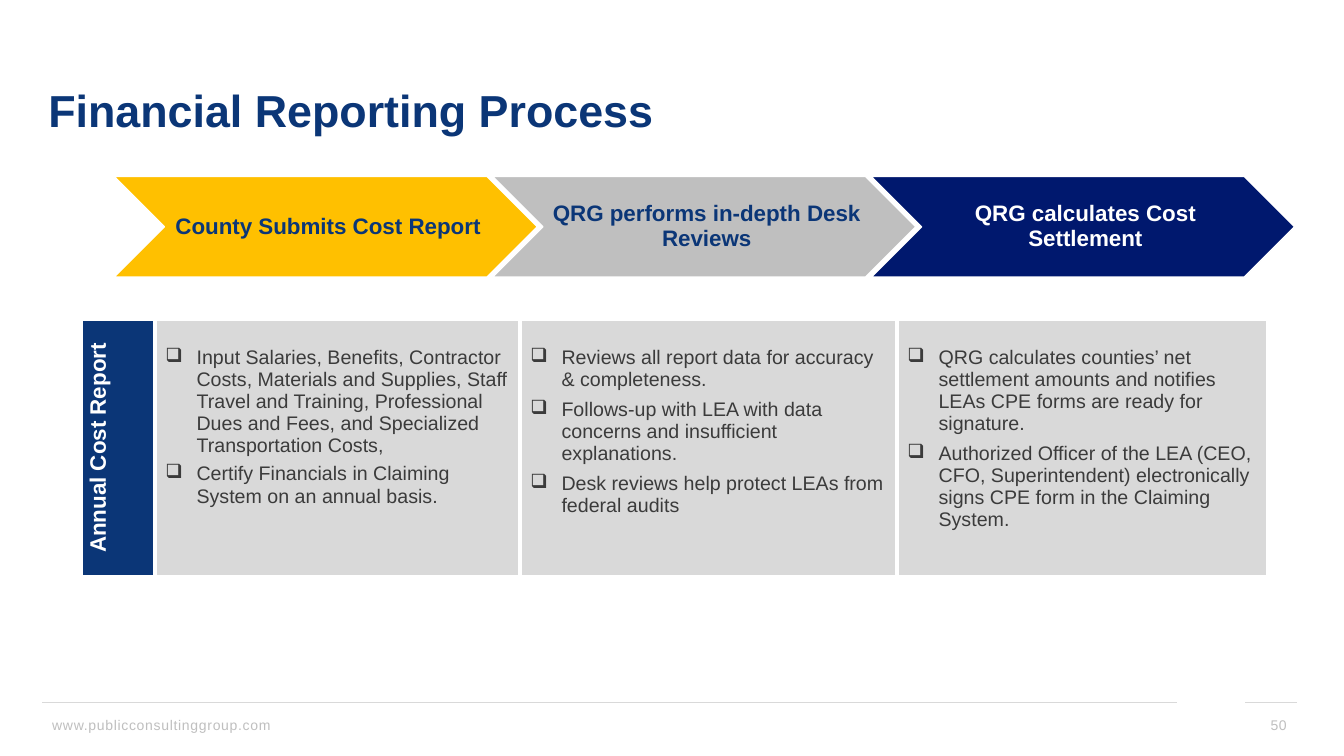
import pptx
import pptx.dml.color
import pptx.enum.shapes
import pptx.enum.text
import pptx.oxml
import pptx.oxml.ns
import pptx.util
from pptx.util import Inches

ALIGN = pptx.enum.text.PP_ALIGN
ANCHOR = pptx.enum.text.MSO_ANCHOR
NAVY, WHITE, GREY, TEXT = "0B3677", "FFFFFF", "BFBFBF", "3B3B3B"

STEPS = [
    ("County Submits Cost Report", "FFC000", NAVY),
    ("QRG performs in-depth Desk Reviews", GREY, NAVY),
    ("QRG calculates Cost Settlement", "00186E", WHITE),
]
# Each column: width, gap between items in points, items
COLUMNS = [
    (3.62, 4.5, [
        "Input Salaries, Benefits, Contractor Costs, Materials and Supplies, "
        "Staff Travel and Training, Professional Dues and Fees, and "
        "Specialized Transportation Costs,",
        "Certify Financials in Claiming System on an annual basis.",
    ]),
    (3.74, 5.75, [
        "Reviews all report data for accuracy & completeness.",
        "Follows-up with LEA with data concerns and insufficient explanations.",
        "Desk reviews help protect LEAs from federal audits",
    ]),
    (3.68, 5.75, [
        "QRG calculates counties’ net settlement amounts and notifies LEAs "
        "CPE forms are ready for signature.",
        "Authorized Officer of the LEA (CEO, CFO, Superintendent) "
        "electronically signs CPE form in the Claiming System.",
    ]),
]


def rgb(color):
    return pptx.dml.color.RGBColor.from_string(color)


def add_xml(parent, xml):
    ns = pptx.oxml.ns.nsdecls("a")
    parent.append(pptx.oxml.parse_xml(xml.replace(" ", f" {ns} ", 1)))


def style(p, size, color, bold=False, align=ALIGN.LEFT):
    p.alignment = align
    f = p.font
    f.name, f.size, f.bold = "Arial", pptx.util.Pt(size), bold
    f.color.rgb = rgb(color)


def fill(sp, color):
    sp.fill.solid()
    sp.fill.fore_color.rgb = rgb(color)


def add_title(slide, left, top, width, height):
    sp = slide.shapes.title
    sp.left, sp.top, sp.width, sp.height = map(Inches, (left, top, width, height))
    tf = sp.text_frame
    tf.text = "Financial Reporting Process"
    tf.vertical_anchor = ANCHOR.MIDDLE
    p = tf.paragraphs[0]
    p.line_spacing = 0.9
    style(p, 32, NAVY, True)


def add_steps(slide, left, top, width, height):
    step_width = 4.2
    pitch = (width - step_width) / (len(STEPS) - 1)
    for i, (label, color, font_color) in enumerate(STEPS):
        sp = slide.shapes.add_shape(
            pptx.enum.shapes.MSO_SHAPE.CHEVRON, Inches(left + i * pitch),
            Inches(top), Inches(step_width), Inches(height))
        sp.shadow.inherit = False
        fill(sp, color)
        sp.line.color.rgb = rgb(WHITE)
        sp.line.width = pptx.util.Pt(1)
        tf = sp.text_frame
        tf.word_wrap = True
        tf.vertical_anchor = ANCHOR.MIDDLE
        tf.margin_left = Inches(0.07)
        tf.margin_top = tf.margin_right = tf.margin_bottom = Inches(0.02)
        tf.text = label
        p = tf.paragraphs[0]
        p.line_spacing = 0.9
        style(p, 16, font_color, True, ALIGN.CENTER)


def format_cell(cell, color):
    """Give the cell white borders and a solid fill."""
    tcPr = cell._tc.get_or_add_tcPr()
    for side in ("lnL", "lnR", "lnT", "lnB"):
        width = pptx.util.Pt(2.25 if side == "lnT" else 3)
        add_xml(tcPr, f'<a:{side} w="{width}"><a:solidFill>'
                      f'<a:srgbClr val="{WHITE}"/></a:solidFill></a:{side}>')
    fill(cell, color)


def add_items(cell, items, gap):
    cell.margin_top = Inches(0.27)
    tf = cell.text_frame
    tf.text = "\n".join(items)
    for i, p in enumerate(tf.paragraphs):
        pPr = p._p.get_or_add_pPr()
        pPr.set("marL", str(Inches(0.31)))
        pPr.set("indent", str(-Inches(0.31)))
        add_xml(pPr, '<a:buChar char="❑"/>')
        if i:
            p.space_before = pptx.util.Pt(gap)
        style(p, 14, TEXT)


def add_report_table(slide, left, top, width, height):
    table = slide.shapes.add_table(
        1, len(COLUMNS) + 1, Inches(left), Inches(top), Inches(width),
        Inches(height)).table
    table.first_row = table.horz_banding = False

    table.columns[0].width = Inches(width - sum(c[0] for c in COLUMNS))
    heading = table.cell(0, 0)
    heading.text = "Annual Cost Report"
    format_cell(heading, NAVY)
    heading._tc.tcPr.set("vert", "vert270")
    style(heading.text_frame.paragraphs[0], 16, WHITE, True, ALIGN.CENTER)

    for i, (col_width, gap, items) in enumerate(COLUMNS, 1):
        table.columns[i].width = Inches(col_width)
        cell = table.cell(0, i)
        format_cell(cell, "D9D9D9")
        add_items(cell, items, gap)


def add_footer_text(slide, text, left, top, width, height, align):
    sp = slide.shapes.add_textbox(*map(Inches, (left, top, width, height)))
    tf = sp.text_frame
    tf.word_wrap = True
    tf.vertical_anchor = ANCHOR.MIDDLE
    tf.text = text
    p = tf.paragraphs[0]
    style(p, 10, GREY, align=align)
    p.runs[0].font._element.set("spc", "50")


def add_footer(slide, left, top, width):
    right = left + width
    for x1, x2 in ((left, 11.67), (12.35, right)):
        line = slide.shapes.add_connector(
            pptx.enum.shapes.MSO_CONNECTOR.STRAIGHT,
            *map(Inches, (x1, top, x2, top)))
        line.line.color.rgb = rgb("D9D9D9")
        line.line.width = pptx.util.Pt(0.5)
        add_xml(line._element.spPr, "<a:effectLst />")
    add_footer_text(slide, "www.publicconsultinggroup.com",
                    left, top + 0.08, 3.87, 0.28, ALIGN.LEFT)
    add_footer_text(slide, "50", right - 0.42, top + 0.02, 0.42, 0.4, ALIGN.RIGHT)


def main():
    prs = pptx.Presentation()
    prs.slide_width, prs.slide_height = Inches(13.33), Inches(7.5)
    slide = prs.slides.add_slide(prs.slide_layouts[5])
    add_title(slide, 0.38, 0.4, 12.5, 1.45)
    add_steps(slide, 1.13, 1.75, 11.71, 1)
    add_report_table(slide, 0.8, 3.17, 11.78, 2.55)
    add_footer(slide, 0.42, 6.97, 12.44)
    prs.save("out.pptx")


if __name__ == "__main__":
    main()
